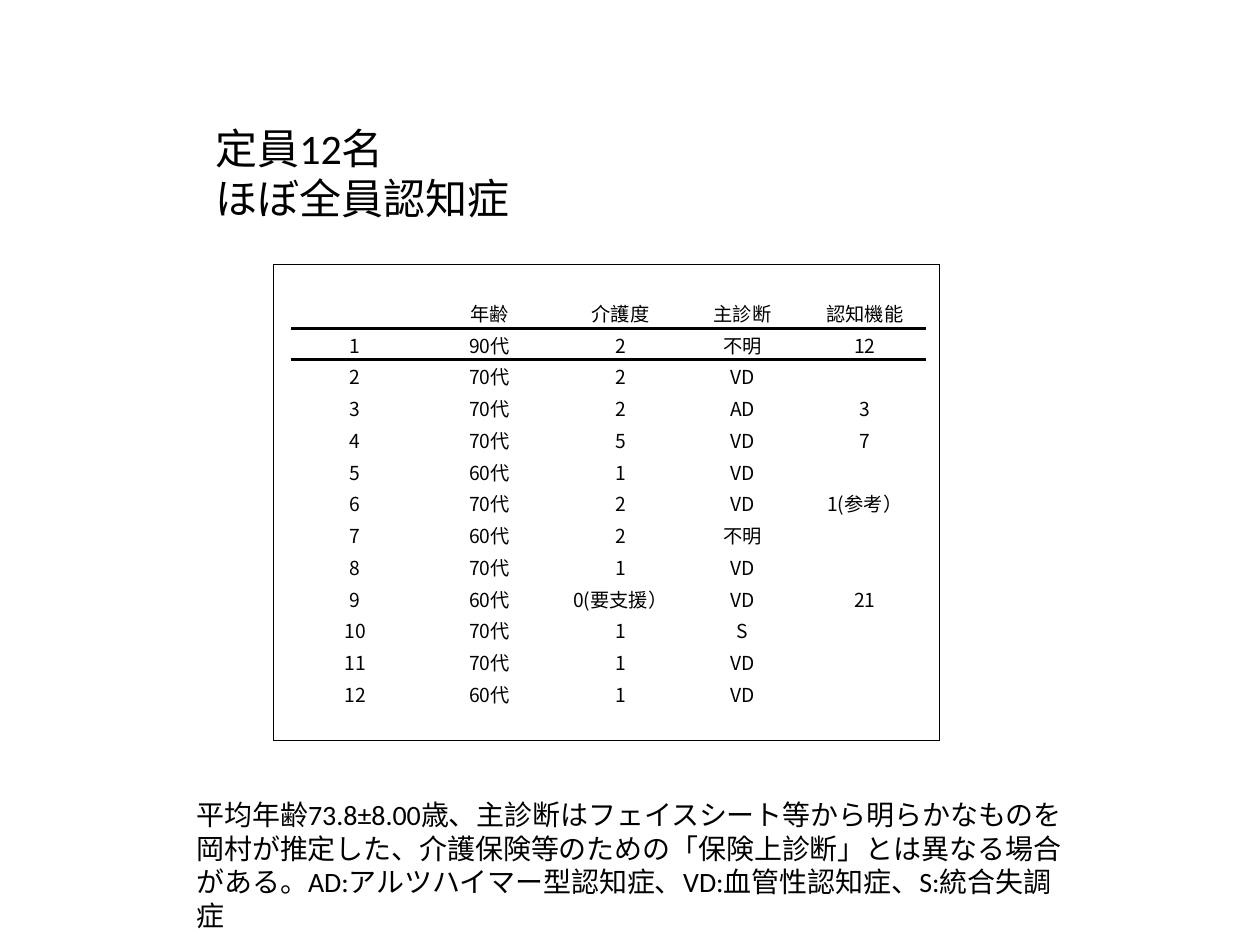
"""Build a slide listing the twelve residents and their diagnoses."""
from dataclasses import dataclass
from typing import NamedTuple

import pptx
import pptx.dml.color
import pptx.enum.text
import pptx.oxml
import pptx.oxml.ns
import pptx.util
from lxml import etree

Inches = pptx.util.Inches
Pt = pptx.util.Pt
qn = pptx.oxml.ns.qn
ALIGN = pptx.enum.text.PP_ALIGN
ANCHOR = pptx.enum.text.MSO_ANCHOR


@dataclass(frozen=True)
class Theme:
    ink: str = "000000"
    text_font: str = "Calibri"
    table_font: str = "Noto Sans CJK JP"
    title_size: int = 24
    note_size: int = 16
    table_size: int = 11
    frame_width: float = 0.5
    rule_width: float = 2
    no_grid_style: str = "{2D5ABB26-0587-4C30-8999-92F81FD0307C}"


class Box(NamedTuple):
    left: float
    top: float
    width: float
    height: float

    def lengths(self) -> list:
        return [Inches(v) for v in self]


class Resident(NamedTuple):
    number: str
    age: str
    care_level: str
    diagnosis: str
    cognition: str = ""


THEME = Theme()
TITLE_BOX = Box(1.61, 0.92, 5.2, 0.91)
TABLE_BOX = Box(2.17, 2.1, 5.28, 3.78)
NOTE_BOX = Box(1.46, 6.28, 7.09, 0.91)
COLUMN_WIDTHS = [0.14, 1.02, 1.11, 0.97, 0.97, 0.97, 0.11]
TITLE = ["定員12名", "ほぼ全員認知症"]
NOTE = ("平均年齢73.8±8.00歳、主診断はフェイスシート等から明らかなものを岡村が推定した、"
        "介護保険等のための「保険上診断」とは異なる場合がある。"
        "AD:アルツハイマー型認知症、VD:血管性認知症、S:統合失調症")
HEADER = Resident("", "年齢", "介護度", "主診断", "認知機能")
RESIDENTS = [
    Resident("1", "90代", "2", "不明", "12"),
    Resident("2", "70代", "2", "VD"),
    Resident("3", "70代", "2", "AD", "3"),
    Resident("4", "70代", "5", "VD", "7"),
    Resident("5", "60代", "1", "VD"),
    Resident("6", "70代", "2", "VD", "1(参考）"),
    Resident("7", "60代", "2", "不明"),
    Resident("8", "70代", "1", "VD"),
    Resident("9", "60代", "0(要支援）", "VD", "21"),
    Resident("10", "70代", "1", "S"),
    Resident("11", "70代", "1", "VD"),
    Resident("12", "60代", "1", "VD"),
]


def add_run(p, text: str, font: str, size: int) -> None:
    """Add one styled run to a paragraph."""
    r = p.add_run()
    r.text = text
    r.font.name = font
    r.font.size = Pt(size)
    r.font.color.rgb = pptx.dml.color.RGBColor.from_string(THEME.ink)


def fill_text(tf, lines: list[str], size: int) -> None:
    """Write left-aligned lines from the top of a text frame."""
    tf.word_wrap = True
    tf.auto_size = pptx.enum.text.MSO_AUTO_SIZE.SHAPE_TO_FIT_TEXT
    tf.vertical_anchor = ANCHOR.TOP
    for i, line in enumerate(lines):
        p = tf.add_paragraph() if i else tf.paragraphs[0]
        p.alignment = ALIGN.LEFT
        add_run(p, line, THEME.text_font, size)


def add_border(cell, side: str, width: float) -> None:
    """Draw one solid edge of a cell."""
    ln = etree.SubElement(cell._tc.get_or_add_tcPr(), qn(f"a:ln{side}"), w=str(Pt(width)))
    fill = etree.SubElement(ln, qn("a:solidFill"))
    etree.SubElement(fill, qn("a:srgbClr"), val=THEME.ink)


def fill_cell(cell, text: str) -> None:
    """Write centred text, or keep an empty cell as low as its row."""
    cell.vertical_anchor = ANCHOR.MIDDLE
    cell.margin_left = cell.margin_right = cell.margin_top = Inches(0.01)
    cell.margin_bottom = 0
    p = cell.text_frame.paragraphs[0]
    p.alignment = ALIGN.CENTER
    if text:
        add_run(p, text, THEME.table_font, THEME.table_size)
        r_pr = p.runs[0].font._element
        etree.SubElement(r_pr, qn("a:ea"), typeface=THEME.table_font)
    else:
        etree.SubElement(p._p, qn("a:endParaRPr"), sz=str(THEME.table_size * 100))


def add_resident_table(s, box: Box, records: list[Resident]) -> None:
    """Draw the framed table with a margin of blank cells around the records."""
    last_row, last_col = len(records) + 1, len(COLUMN_WIDTHS) - 1
    table = s.shapes.add_table(last_row + 1, last_col + 1, *box.lengths()).table
    table.first_row = table.horz_banding = False
    table._tbl.tblPr.find(qn("a:tableStyleId")).text = THEME.no_grid_style
    for column, width in zip(table.columns, COLUMN_WIDTHS):
        column.width = Inches(width)
    blank = [""] * (last_col + 1)
    grid = [blank, *(["", *record, ""] for record in records), blank]
    for i, row in enumerate(grid):
        table.rows[i].height = Inches(box.height / len(grid))
        for j, text in enumerate(row):
            cell = table.cell(i, j)
            fill_cell(cell, text)
            inner = 0 < j < last_col
            edges = [
                ("L", j == 0, THEME.frame_width),
                ("R", j == last_col, THEME.frame_width),
                ("T", i == 0, THEME.frame_width),
                ("T", i == 2 and inner, THEME.rule_width),
                ("B", i == 1 and inner, THEME.rule_width),
                ("B", i == last_row, THEME.frame_width),
            ]
            for side, drawn, width in edges:
                if drawn:
                    add_border(cell, side, width)
            cell.fill.background()


def main() -> None:
    """Build and save the presentation."""
    prs = pptx.Presentation()
    prs.slide_width, prs.slide_height = Inches(10), Inches(7.5)
    s = prs.slides.add_slide(prs.slide_layouts[5])
    title = s.shapes.title
    title.left, title.top, title.width, title.height = TITLE_BOX.lengths()
    fill_text(title.text_frame, TITLE, THEME.title_size)
    add_resident_table(s, TABLE_BOX, [HEADER, *RESIDENTS])
    note = s.shapes.add_textbox(*NOTE_BOX.lengths())
    fill_text(note.text_frame, [NOTE], THEME.note_size)
    prs.save("out.pptx")


if __name__ == "__main__":
    main()
